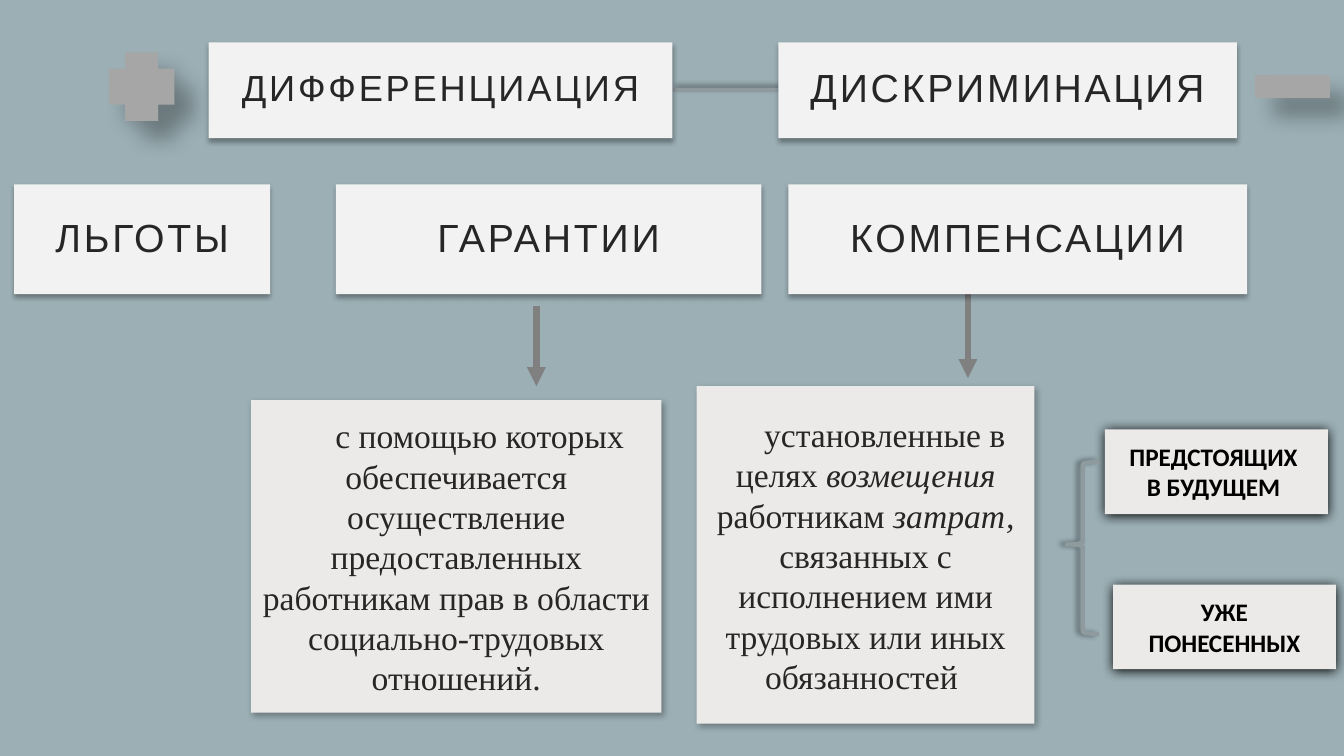
from dataclasses import dataclass

from lxml import etree
from pptx import Presentation
from pptx.dml.color import RGBColor
from pptx.enum.shapes import MSO_CONNECTOR, MSO_SHAPE
from pptx.enum.text import MSO_ANCHOR, PP_ALIGN
from pptx.oxml.ns import qn
from pptx.util import Inches, Pt

RECT, PLUS, MINUS = MSO_SHAPE.RECTANGLE, MSO_SHAPE.CROSS, MSO_SHAPE.MATH_MINUS
BRACE = MSO_SHAPE.LEFT_BRACE
STRAIGHT = MSO_CONNECTOR.STRAIGHT
CENTER, MIDDLE = PP_ALIGN.CENTER, MSO_ANCHOR.MIDDLE
WIDTH, HEIGHT = Inches(13.33), Inches(7.5)
BACKGROUND, SIGN_GRAY, LINK_GRAY, ARROW_GRAY = "9BAFB5", "A6A6A6", "8E9A9E", "808080"


@dataclass(frozen=True)
class Shadow:
    alpha: int
    blur: float
    dist: float
    angle: int


@dataclass(frozen=True)
class Style:
    fill: str
    font: str
    size: float
    color: str
    shadow: Shadow
    bold: bool = False
    tracking: float = 0
    indent: float = 0
    line_spacing: float = 1
    margins: tuple[float, float] = (0.1, 0.05)


@dataclass(frozen=True)
class Area:
    """Left, top, width and height in percent of the slide."""
    x: float
    y: float
    w: float
    h: float


@dataclass(frozen=True)
class Box:
    text: str  # a new line starts a paragraph, asterisks enclose italics
    area: Area
    style: Style


@dataclass(frozen=True)
class Link:
    start: tuple[float, float]
    end: tuple[float, float]
    color: str
    width: float
    arrow: bool = False
    shadow: Shadow | None = None


SIGN_SHADOW = Shadow(30, 15, 18, 45)
HEADING = Style("F2F2F2", "Arial", 28, "262626", Shadow(32, 3.5, 2.2, 90),
                tracking=2, line_spacing=0.9, margins=(0.3, 0.2))
LONG_HEADING = Style("F2F2F2", "Arial", 25.9, "262626", HEADING.shadow,
                     tracking=2, line_spacing=0.9, margins=(0.3, 0.2))
BODY = Style("ECEAE8", "Times New Roman", 24, "262626", Shadow(30, 4.5, 2.6, 53),
             indent=0.38)
NOTE = Style("ECEAE8", "Calibri", 18, "000000", Shadow(100, 8.5, 1, 90), bold=True)

TOP_Y, TOP_H = 5.6, 12.67
ROW_Y, ROW_H = 24.4, 14.53
NOTE_W, NOTE_H = 16.58, 11.2

BOXES = [
    Box("ДИФФЕРЕНЦИАЦИЯ", Area(15.53, TOP_Y, 34.51, TOP_H), LONG_HEADING),
    Box("ДИСКРИМИНАЦИЯ", Area(57.91, TOP_Y, 34.13, TOP_H), HEADING),
    Box("ЛЬГОТЫ", Area(1.05, ROW_Y, 19.05, ROW_H), HEADING),
    Box("ГАРАНТИИ", Area(25, ROW_Y, 31.66, ROW_H), HEADING),
    Box("КОМПЕНСАЦИИ", Area(58.66, ROW_Y, 34.13, ROW_H), HEADING),
    Box(" с помощью которых обеспечивается осуществление предоставленных "
        "работникам прав в области социально-трудовых отношений.",
        Area(18.68, 52.93, 30.53, 41.33), BODY),
    Box("установленные в целях *возмещения *работникам *затрат, *связанных с "
        "исполнением ими трудовых или иных обязанностей ",
        Area(51.84, 51.07, 25.13, 44.67), BODY),
    Box("ПРЕДСТОЯЩИХ \nВ БУДУЩЕМ ", Area(82.22, 56.8, NOTE_W, NOTE_H), NOTE),
    Box("УЖЕ\nПОНЕСЕННЫХ", Area(82.82, 77.33, NOTE_W, NOTE_H), NOTE),
]

LINKS = [
    Link((50.04, 11.87), (57.91, 11.87), LINK_GRAY, 3, shadow=Shadow(40, 4, 3, 315)),
    Link((39.91, 40.53), (39.91, 51.07), ARROW_GRAY, 4.5, arrow=True),
    Link((72.02, 37.6), (72.02, 50), ARROW_GRAY, 4.5, arrow=True),
]

SIGNS = [
    (PLUS, Area(8.1, 6.93, 4.88, 9.07)),
    (MINUS, Area(92.42, 4.8, 7.5, 13.33)),
]


def rgb(color: str) -> RGBColor:
    return RGBColor.from_string(color)


def px(share: float) -> int:
    return round(WIDTH * share / 100)


def py(share: float) -> int:
    return round(HEIGHT * share / 100)


def set_shadow(sp, shadow: Shadow | None) -> None:
    props = sp.element.spPr
    effects = props.find(qn("a:effectLst"))
    if effects is None:
        effects = etree.SubElement(props, qn("a:effectLst"))
    if shadow is None:
        return
    outer = etree.SubElement(
        effects, qn("a:outerShdw"), blurRad=str(Pt(shadow.blur)),
        dist=str(Pt(shadow.dist)), dir=str(shadow.angle * 60000),
        algn="ctr", rotWithShape="0")
    color = etree.SubElement(outer, qn("a:srgbClr"), val="000000")
    etree.SubElement(color, qn("a:alpha"), val=str(shadow.alpha * 1000))


def add_figure(s, kind, area: Area, fill: str | None, shadow: Shadow):
    sp = s.shapes.add_shape(kind, px(area.x), py(area.y), px(area.w), py(area.h))
    if fill:
        sp.fill.solid()
        sp.fill.fore_color.rgb = rgb(fill)
    else:
        sp.fill.background()
    sp.line.fill.background()
    sp.shadow.inherit = False
    set_shadow(sp, shadow)
    return sp


def format_run(r, style: Style, italic: bool = False) -> None:
    r.font.name = style.font
    r.font.size = Pt(style.size)
    r.font.bold = style.bold
    r.font.italic = italic
    r.font.color.rgb = rgb(style.color)
    if style.tracking:
        r.font._element.set("spc", str(round(style.tracking * 100)))


def add_box(s, box: Box):
    style = box.style
    sp = add_figure(s, RECT, box.area, style.fill, style.shadow)
    tf = sp.text_frame
    tf.word_wrap = True
    tf.vertical_anchor = MIDDLE
    tf.margin_left = tf.margin_right = Inches(style.margins[0])
    tf.margin_top = tf.margin_bottom = Inches(style.margins[1])
    tf.text = box.text
    for p in tf.paragraphs:
        p.alignment = CENTER
        p.line_spacing = style.line_spacing
        if style.indent:
            p._p.get_or_add_pPr().set("indent", str(Inches(style.indent)))
        first, *rest = p.text.split("*")
        p.text = first
        for part in rest:
            p.add_run().text = part
        for i, r in enumerate(p.runs):
            format_run(r, style, italic=i % 2 == 1)
    return sp


def add_link(s, link: Link) -> None:
    (x1, y1), (x2, y2) = link.start, link.end
    line = s.shapes.add_connector(STRAIGHT, px(x1), py(y1), px(x2), py(y2))
    line.line.color.rgb = rgb(link.color)
    line.line.width = Pt(link.width)
    if link.arrow:
        ln = line.element.spPr.find(qn("a:ln"))
        etree.SubElement(ln, qn("a:tailEnd"), type="triangle")
    set_shadow(line, link.shadow)


def main() -> None:
    prs = Presentation()
    prs.slide_width, prs.slide_height = WIDTH, HEIGHT
    s = prs.slides.add_slide(prs.slide_layouts[6])
    s.background.fill.solid()
    s.background.fill.fore_color.rgb = rgb(BACKGROUND)

    # Connecting line and arrows
    for link in LINKS:
        add_link(s, link)

    # Headings, definitions and notes
    for box in BOXES:
        sp = add_box(s, box)

    # Brace joining the two notes
    brace = add_figure(s, BRACE, Area(79.37, 61.07, 2.4, 22.8), None, Shadow(40, 4, 3, 180))
    brace.adjustments[0], brace.adjustments[1] = 0.08, 0.48
    brace.line.color.rgb = rgb(LINK_GRAY)
    brace.line.width = Pt(3)

    # Plus and minus signs
    for kind, area in SIGNS:
        add_figure(s, kind, area, SIGN_GRAY, SIGN_SHADOW)

    prs.save("out.pptx")


if __name__ == "__main__":
    main()
